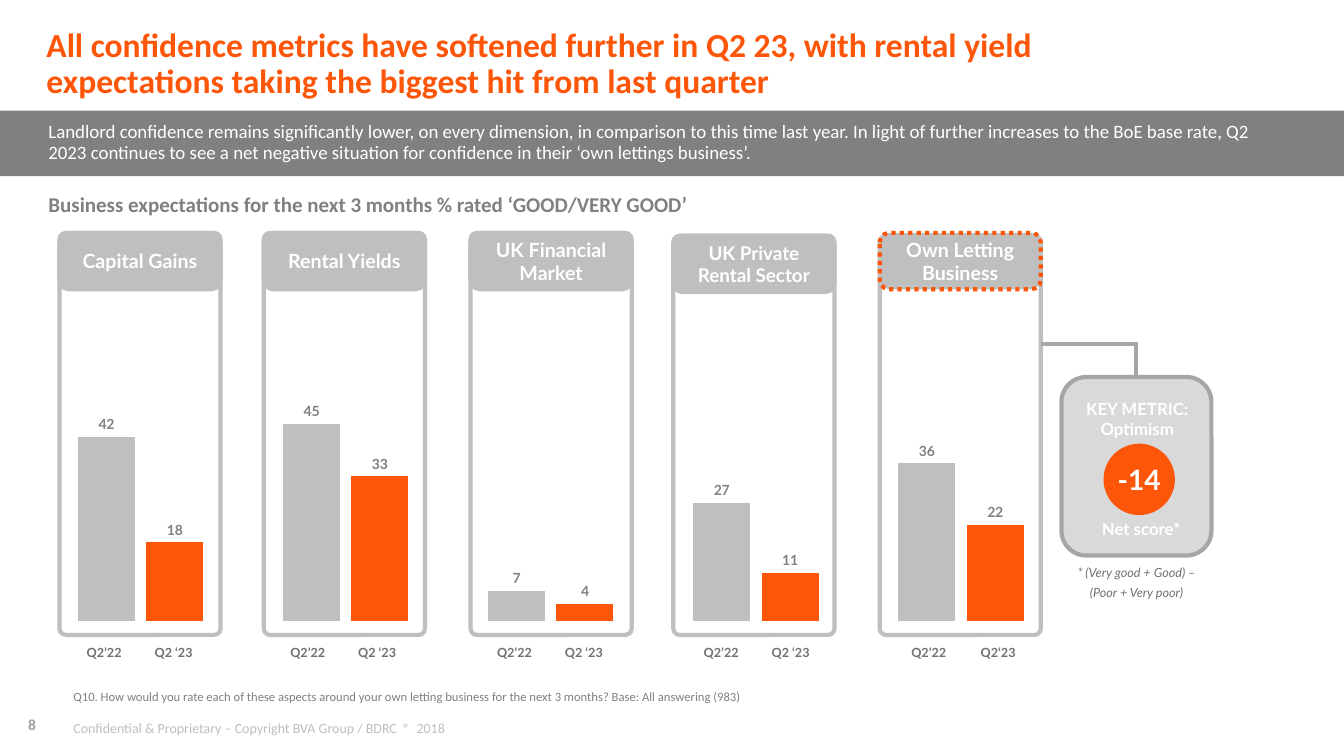
from dataclasses import dataclass

from lxml import etree
from pptx import Presentation
from pptx import util as u
from pptx.chart import data as chart_data
from pptx.dml import color
from pptx.enum import chart as charts, dml, shapes, text
from pptx.oxml import ns, parse_xml

Cm, Pt = u.Cm, u.Pt
ALIGN, ANCHOR, SHAPE = text.PP_ALIGN, text.MSO_ANCHOR, shapes.MSO_SHAPE


@dataclass(frozen=True)
class Theme:
    orange: str = "FD5608"
    white: str = "FFFFFF"
    silver: str = "BFBFBF"
    grey: str = "808080"
    ash: str = "A6A6A6"
    pale: str = "D9D9D9"
    slate: str = "707070"
    number: str = "9F9F9F"
    sans: str = "Calibri"
    accent: str = "Lato"
    title: float = 24
    score: float = 20
    heading: float = 15
    card: float = 14
    lede: float = 13.5
    metric: float = 12
    page_number: float = 11
    label: float = 10
    small: float = 9
    outline: float = 3


THEME = Theme()


@dataclass(frozen=True)
class Metric:
    name: str
    left: float
    label_left: float
    values: tuple
    header_top: float = 5.87
    frame_top: float = 5.87
    size: float = THEME.card
    border: str = THEME.silver
    dash: object = None
    quarters: tuple = ("Q2’22", "Q2 ‘23")


METRICS = (
    Metric("Capital Gains", 1.5, 1.8, (42, 18)),
    Metric("Rental Yields", 6.65, 6.93, (45, 33)),
    Metric("UK Financial Market", 11.86, 12.14, (7, 4)),
    Metric("UK Private Rental Sector", 16.97, 17.35, (27, 11),
           header_top=5.94, frame_top=5.94, size=13.5),
    Metric("Own Letting Business", 22.17, 22.58, (36, 22), frame_top=5.94,
           border=THEME.orange, dash=dml.MSO_LINE.ROUND_DOT, quarters=("Q2’22", "Q2‘23")),
)
FRAME_BOTTOM = 16


def rgb(value):
    return color.RGBColor.from_string(value)


def write(frame, content, size, ink, font=THEME.sans, bold=False, italic=False,
          align=ALIGN.LEFT, anchor=ANCHOR.TOP, spacing=None, wrap=True, margins=None):
    frame.word_wrap = wrap
    frame.auto_size = text.MSO_AUTO_SIZE.NONE
    frame.vertical_anchor = anchor
    if margins is not None:
        frame.margin_left = frame.margin_right = Cm(margins[0])
        frame.margin_top = frame.margin_bottom = Cm(margins[1])
    frame.text = content
    for para in frame.paragraphs:
        para.alignment = align
        para.space_before = Pt(0)
        if spacing:
            para.line_spacing = spacing
        for span in para.runs:
            span.font.name, span.font.size = font, Pt(size)
            span.font.bold, span.font.italic = bold, italic
            span.font.color.rgb = rgb(ink)


def place(holder, left, top, width, height):
    holder.left, holder.top = Cm(left), Cm(top)
    holder.width, holder.height = Cm(width), Cm(height)


def add_placeholder_text(holder, area, content, size, ink, **style):
    place(holder, *area)
    write(holder.text_frame, content, size, ink, anchor=ANCHOR.MIDDLE,
          spacing=0.9, margins=(0, 0), **style)
    for para in holder.text_frame.paragraphs:
        properties = para._p.get_or_add_pPr()
        properties.set("marL", "0")
        properties.set("indent", "0")
        etree.SubElement(properties, ns.qn("a:buNone"))


def add_text(page, area, content, size, ink, **style):
    box = page.shapes.add_textbox(*map(Cm, area))
    write(box.text_frame, content, size, ink, **style)


def add_panel(page, kind, area, fill=None, border=None, dash=None, corner=None):
    panel = page.shapes.add_shape(kind, *map(Cm, area))
    panel.shadow.inherit = False
    if corner is not None:
        panel.adjustments[0] = corner
    if fill:
        panel.fill.solid()
        panel.fill.fore_color.rgb = rgb(fill)
    else:
        panel.fill.background()
    if border:
        panel.line.color.rgb = rgb(border)
        panel.line.width = Pt(THEME.outline)
        if dash:
            panel.line.dash_style = dash
    else:
        panel.line.fill.background()
    return panel


def add_link(page, start, end):
    link = page.shapes.add_connector(shapes.MSO_CONNECTOR.STRAIGHT, *map(Cm, start + end))
    link.line.color.rgb = rgb(THEME.ash)
    link.line.width = Pt(THEME.outline)
    etree.SubElement(link._element.spPr, ns.qn("a:effectLst"))


def add_confidence_chart(page):
    values = [value for metric in METRICS for value in (*metric.values, None)][:-1]
    source = chart_data.CategoryChartData()
    source.categories = [str(index + 1) for index in range(len(values))]
    source.add_series("Series 1", values)
    chart = page.shapes.add_chart(charts.XL_CHART_TYPE.COLUMN_CLUSTERED, Cm(1.45), Cm(5.94),
                                  Cm(24.79), Cm(9.98), source).chart
    chart.has_legend = chart.has_title = False
    chart.font.name, chart.font.size = THEME.accent, Pt(THEME.label)
    chart.category_axis.visible = chart.value_axis.visible = False
    chart.value_axis.has_major_gridlines = False
    chart.value_axis.minimum_scale, chart.value_axis.maximum_scale = 0, 85
    chart.value_axis.major_unit = 10
    plot = chart.plots[0]
    plot.gap_width, plot.vary_by_categories = 20, False
    plot.has_data_labels = True
    labels = plot.data_labels
    labels.show_value, labels.position = True, charts.XL_LABEL_POSITION.OUTSIDE_END
    labels.font.name, labels.font.size = THEME.accent, Pt(THEME.label)
    labels.font.bold, labels.font.color.rgb = True, rgb(THEME.grey)
    series = plot.series[0]
    series.format.fill.solid()
    series.format.fill.fore_color.rgb = rgb(THEME.silver)
    for index in range(1, len(values), 3):
        fill = series.points[index].format.fill
        fill.solid()
        fill.fore_color.rgb = rgb(THEME.orange)
    area = chart._chartSpace.chart.plotArea
    for layout in area.findall(ns.qn("c:layout")):
        area.remove(layout)
    sizes = "".join(f'<c:{key} val="{value}"/>' for key, value in
                    (("layoutTarget", "inner"), ("xMode", "edge"), ("yMode", "edge"),
                     ("x", 0.015), ("y", 0.032), ("w", 0.973), ("h", 0.942)))
    area.insert(0, parse_xml(f'<c:layout {ns.nsdecls("c")}><c:manualLayout>{sizes}'
                             '</c:manualLayout></c:layout>'))


def add_metric_card(page, metric):
    add_panel(page, SHAPE.ROUNDED_RECTANGLE,
              (metric.left, metric.frame_top, 4.06, FRAME_BOTTOM - metric.frame_top),
              border=THEME.silver, corner=0.039)
    header = add_panel(page, SHAPE.ROUNDED_RECTANGLE, (metric.left, metric.header_top, 4.06, 1.42),
                       THEME.silver, metric.border, metric.dash)
    write(header.text_frame, metric.name, metric.size, THEME.white, font=THEME.accent,
          bold=True, align=ALIGN.CENTER, anchor=ANCHOR.MIDDLE)
    for index, quarter in enumerate(metric.quarters):
        add_text(page, (metric.label_left + 1.75 * index, 16.13, 1.65, 0.64), quarter,
                 THEME.small, THEME.slate, font=THEME.accent, bold=True, align=ALIGN.CENTER)


def add_key_metric(page):
    centred = dict(font=THEME.accent, align=ALIGN.CENTER)
    add_link(page, (28.63, 9.55), (28.63, 8.61))
    add_link(page, (26.24, 8.66), (28.63, 8.66))
    add_panel(page, SHAPE.ROUNDED_RECTANGLE, (26.75, 9.5, 3.78, 4.5), THEME.pale, THEME.ash)
    add_text(page, (27.1, 9.93, 3.12, 1.27), "KEY METRIC:\nOptimism", THEME.metric,
             THEME.white, bold=True, **centred)
    score = add_panel(page, SHAPE.OVAL, (27.81, 11.18, 1.8, 1.8), THEME.orange)
    write(score.text_frame, "-14", THEME.score, THEME.white, bold=True,
          anchor=ANCHOR.MIDDLE, wrap=False, margins=(0.2, 0.13), **centred)
    add_text(page, (27.2, 12.95, 3.12, 0.76), "Net score*", THEME.metric, THEME.white,
             bold=True, anchor=ANCHOR.MIDDLE, **centred)
    add_text(page, (26.75, 14.05, 3.78, 1.19), "* (Very good + Good) – (Poor + Very poor)",
             THEME.small, THEME.slate, italic=True, anchor=ANCHOR.BOTTOM,
             spacing=Pt(14.2), **centred)


def main():
    deck = Presentation()
    deck.slide_width, deck.slide_height = Cm(33.87), Cm(19.05)
    page = deck.slides.add_slide(deck.slide_layouts[4])
    title, lede, note, heading, spare = page.placeholders
    spare.element.getparent().remove(spare.element)
    banner = add_panel(page, SHAPE.RECTANGLE, (0, 2.79, 33.87, 1.65), THEME.grey)
    banner.element.getparent().insert(2, banner.element)
    add_placeholder_text(
        title, (1.17, 0.69, 28.78, 1.88),
        "All confidence metrics have softened further in Q2 23, with rental yield "
        "expectations taking the biggest hit from last quarter",
        THEME.title, THEME.orange, bold=True)
    add_placeholder_text(
        lede, (1.22, 2.79, 30.78, 1.63),
        "Landlord confidence remains significantly lower, on every dimension, in comparison "
        "to this time last year. In light of further increases to the BoE base rate, Q2 2023 "
        "continues to see a net negative situation for confidence in their ‘own lettings business’.",
        THEME.lede, THEME.white)
    add_placeholder_text(
        heading, (1.22, 4.65, 30.43, 1.09),
        "Business expectations for the next 3 months % rated ‘GOOD/VERY GOOD’",
        THEME.heading, THEME.grey, bold=True)
    add_placeholder_text(
        note, (1.85, 17.2, 26.16, 0.76),
        "Q10. How would you rate each of these aspects around your own letting business "
        "for the next 3 months? Base: All answering (983)", THEME.small, THEME.grey)
    add_confidence_chart(page)
    for metric in METRICS:
        add_metric_card(page, metric)
    add_key_metric(page)
    add_text(page, (0.38, 17.81, 1.04, 0.91), "8", THEME.page_number, THEME.number,
             bold=True, anchor=ANCHOR.MIDDLE, margins=(0.33, 0.18))
    add_text(page, (1.6, 18.01, 28.78, 0.61),
             "Confidential & Proprietary – Copyright BVA Group / BDRC  ®  2018",
             THEME.label, THEME.silver)
    deck.save("out.pptx")


if __name__ == "__main__":
    main()
